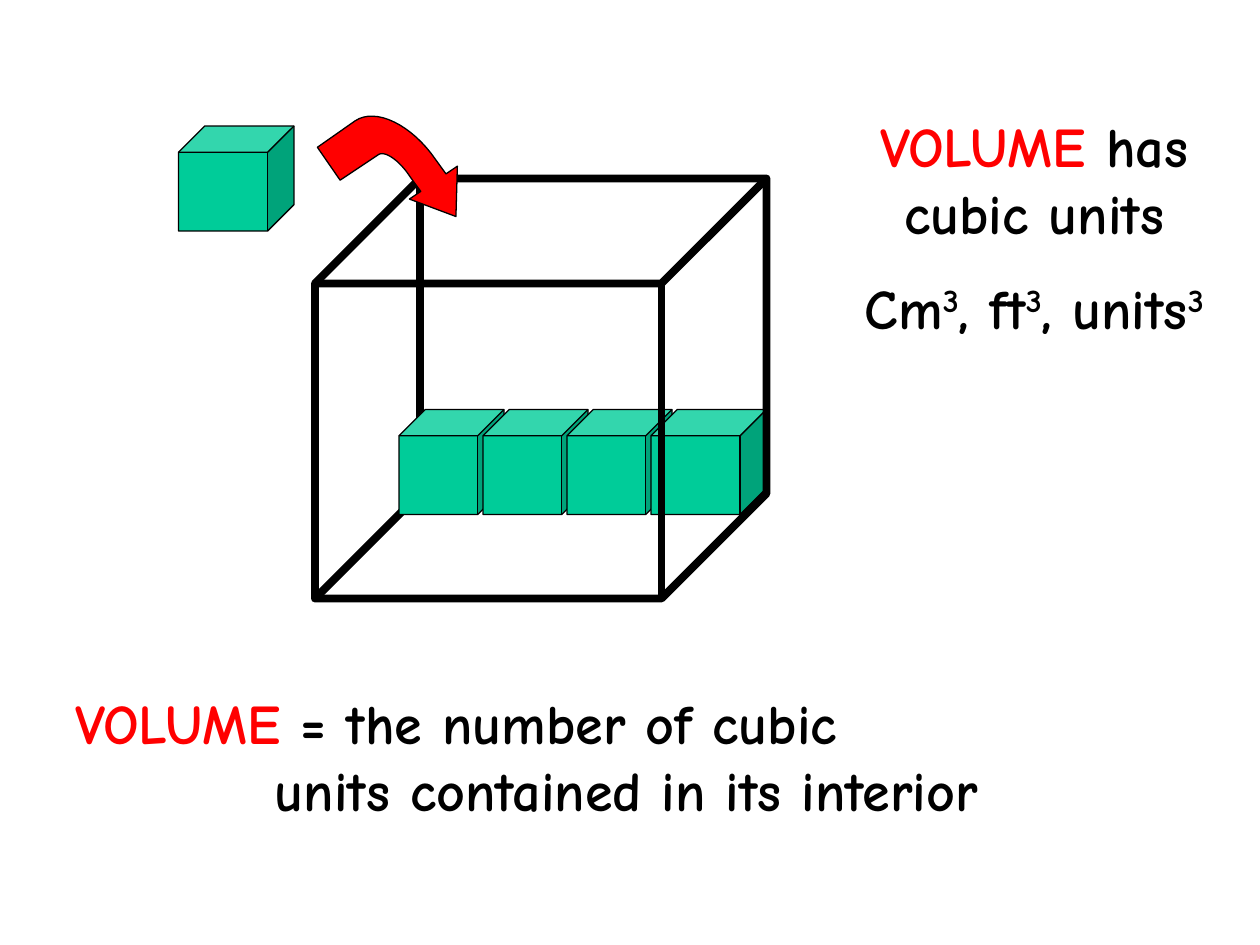
from pptx import Presentation
from pptx.dml.color import RGBColor
from pptx.enum.shapes import MSO_CONNECTOR as Connector, MSO_SHAPE as Shape
from pptx.enum.text import PP_ALIGN as Align
from pptx.oxml import parse_xml
from pptx.oxml.ns import nsdecls
from pptx.util import Pt

THEME = {
    "black": RGBColor(0, 0, 0),
    "red": RGBColor(255, 0, 0),
    "green": RGBColor(0, 204, 153),
    "font": "Comic Neue",
    "size": Pt(32),
    "thin": Pt(0.75),
    "thick": Pt(4.5),
}


def paint(shape, fill, width):
    shape.shadow.inherit = False
    if fill is None:
        shape.fill.background()
    else:
        shape.fill.solid()
        shape.fill.fore_color.rgb = fill
    shape.line.color.rgb = THEME["black"]
    shape.line.width = width


def add_text(para, pieces):
    for text, color, raised in pieces:
        span = para.add_run()
        span.text = text
        font_values = {"name": THEME["font"], "size": THEME["size"], "bold": True}
        for name, value in font_values.items():
            setattr(span.font, name, value)
        span.font.color.rgb = THEME[color]
        if raised:
            span._r.get_or_add_rPr().set("baseline", "30000")


deck = Presentation()
deck.slide_width, deck.slide_height = Pt(720), Pt(540)
page = deck.slides.add_slide(deck.slide_layouts[6])

# Hidden edges of the box, all from its back lower left corner
corner = (240, 282)
for end, width in [((180, 342), "thick"), ((438, 282), "thin"), ((240, 102), "thick")]:
    edge = page.shapes.add_connector(
        Connector.STRAIGHT, *[Pt(value) for value in corner + end])
    edge.line.color.rgb = THEME["black"]
    edge.line.width = THEME[width]
    edge._element.spPr.append(parse_xml(f"<a:effectLst {nsdecls('a')}/>"))

# Row of unit cubes, the open box around them, and the next unit cube
row = [(228 + 48 * i, 234, 66 if i == 3 else 60, 60, THEME["green"], THEME["thin"])
       for i in range(4)]
open_box = (180, 102, 258, 240, None, THEME["thick"])
next_cube = (102, 72, 66, 60, THEME["green"], THEME["thin"])
for left, top, wide, high, fill, width in row + [open_box, next_cube]:
    cube = page.shapes.add_shape(Shape.CUBE, Pt(left), Pt(top), Pt(wide), Pt(high))
    cube.adjustments[0] = 0.25
    paint(cube, fill, width)

# Bent arrow into the box: two points make a line, six a curve
arrow_start = (260.6, 123.8)
arrow_parts = [
    (261.4, 95), (254.9, 99.4), (249.1, 91.4),
    (235.4, 71.3, 214.6, 61.2, 203, 69.1),
    (181.4, 84.2), (194.4, 103), (216, 88.6),
    (219.6, 85.7, 228.2, 91.4, 234.7, 101.5),
    (240.5, 109.4), (234, 113.8),
]
STEPS = 16
points = [arrow_start]
for part in arrow_parts:
    if len(part) == 2:
        points.append(part)
        continue
    knots = [points[-1], part[:2], part[2:4], part[4:]]
    for step in range(1, STEPS + 1):
        t = step / STEPS
        weights = [(1 - t) ** 3, 3 * t * (1 - t) ** 2, 3 * t ** 2 * (1 - t), t ** 3]
        points.append(tuple(sum(w * knot[axis] for w, knot in zip(weights, knots))
                            for axis in (0, 1)))
outline = page.shapes.build_freeform(
    *[Pt(value) for value in arrow_start], scale=1.0)
outline.add_line_segments([(Pt(x), Pt(y)) for x, y in points[1:]], close=True)
paint(outline.convert_to_shape(), THEME["red"], THEME["thin"])

# Definition, with its second line indented
box = page.shapes.add_textbox(Pt(36), Pt(390), Pt(588), Pt(84))
box.text_frame.word_wrap = True
para = box.text_frame.paragraphs[0]
para.alignment = Align.LEFT
indent = para._p.get_or_add_pPr()
indent.set("marL", str(Pt(114)))
indent.set("indent", str(-Pt(114)))
add_text(para, [("VOLUME", "red", False),
                (" = the number of cubic", "black", False)])
para.add_line_break()
add_text(para, [("units contained in its interior", "black", False)])

# Units of volume
box = page.shapes.add_textbox(Pt(480), Pt(60), Pt(222), Pt(180))
box.text_frame.word_wrap = True
para = box.text_frame.paragraphs[0]
para.alignment = Align.CENTER
add_text(para, [("VOLUME ", "red", False), ("has cubic units", "black", False)])
para = box.text_frame.add_paragraph()
para.alignment = Align.CENTER
para.space_before = Pt(16)
for unit in ("Cm", ", ft", ", units"):
    add_text(para, [(unit, "black", False), ("3", "black", True)])

deck.save("out.pptx")
